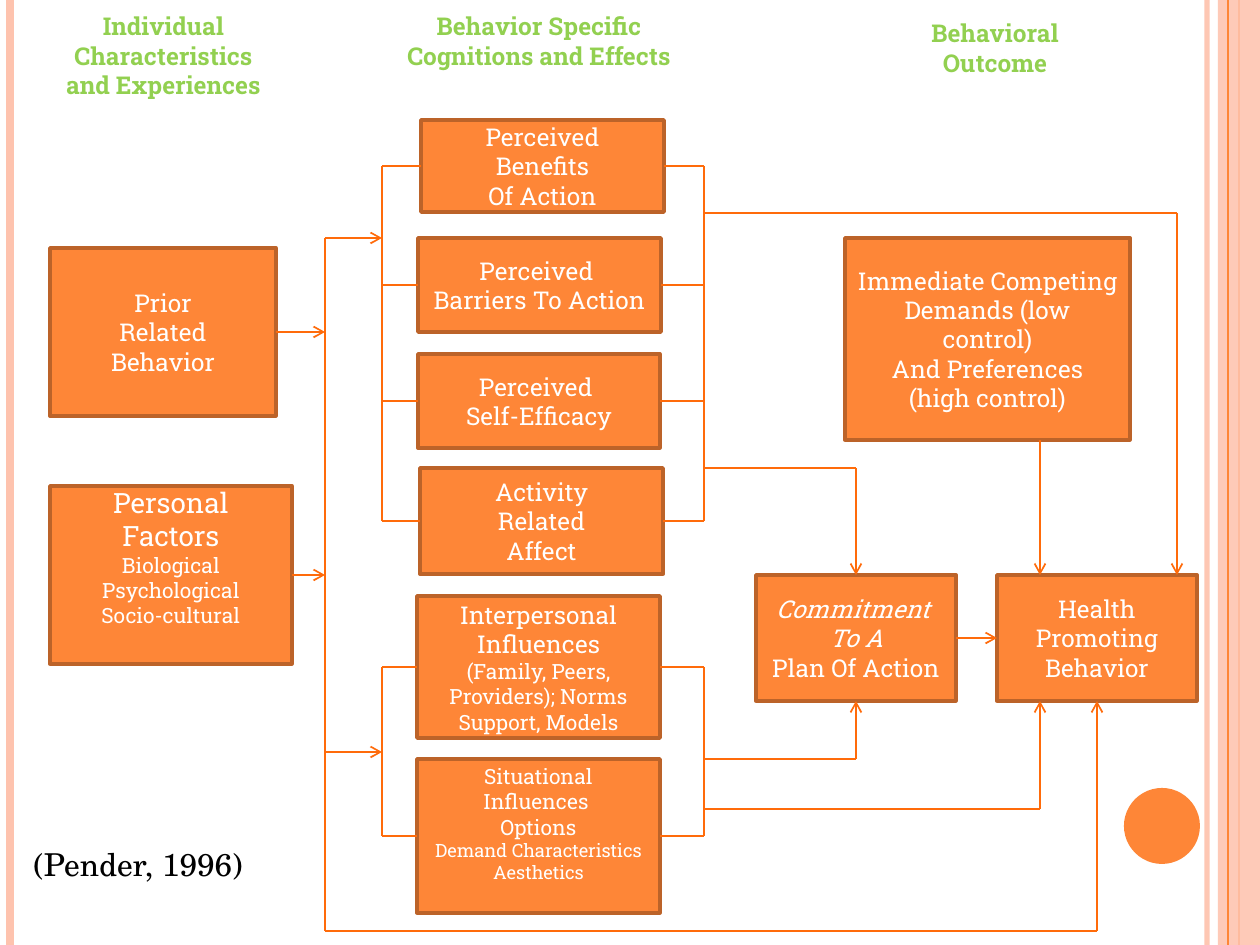
from pptx import Presentation, util as u
from pptx.dml import color
from pptx.enum import shapes, text
from pptx.oxml import ns
from lxml import etree

PX = 914400 / 126
COLORS = {"box": "FE8637", "edge": "BC6329", "flow": "FF6B0A", "pale": "FEC3AE",
          "heading": "92D050", "white": "FFFFFF", "black": "000000"}


def px(n):
    return u.Emu(round(n * PX))


def rgb(name):
    return color.RGBColor.from_string(COLORS[name])


def middle(sp):
    return round((sp.top + sp.height / 2) / PX)


class Board:
    font = "Roboto Slab"

    def __init__(self, prs):
        self.s = prs.slides.add_slide(prs.slide_layouts[6])

    def fill_text(self, tf, lines, ink, sizes, align=text.PP_ALIGN.CENTER,
                  font=None, bold=False, italic=0):
        tf.word_wrap = True
        tf.text = lines
        for i, p in enumerate(tf.paragraphs):
            p.alignment = align
            for r in p.runs:
                r.font.name = font or self.font
                r.font.size = u.Pt(sizes[min(i, len(sizes) - 1)])
                r.font.color.rgb = rgb(ink)
                r.font.bold = bold
                r.font.italic = i < italic

    def alpha(self, fill, percent):
        clr = fill.find(".//" + ns.qn("a:srgbClr"))
        etree.SubElement(clr, ns.qn("a:alpha"), val=str(percent * 1000))

    def shape(self, kind, x, y, w, h, fill, opacity=None):
        sp = self.s.shapes.add_shape(kind, px(x), px(y), px(w), px(h))
        sp.shadow.inherit = False
        sp.fill.solid()
        sp.fill.fore_color.rgb = rgb(fill)
        sp.line.fill.background()
        if opacity:
            self.alpha(sp._element.spPr.find(ns.qn("a:solidFill")), opacity)
        return sp

    def box(self, x, y, w, h, lines, sizes=(14,), italic=0, bottom=6):
        sp = self.shape(shapes.MSO_SHAPE.RECTANGLE, x, y, w, h, "box")
        sp.line.color.rgb = rgb("edge")
        sp.line.width = u.Pt(2)
        tf = sp.text_frame
        tf.vertical_anchor = text.MSO_ANCHOR.MIDDLE
        tf.margin_bottom = px(bottom)
        self.fill_text(tf, lines, "white", sizes, italic=italic)
        return sp

    def label(self, x, y, w, h, lines, ink="heading", size=14, **style):
        tf = self.s.shapes.add_textbox(px(x), px(y), px(w), px(h)).text_frame
        self.fill_text(tf, lines, ink, (size,), **style)

    def line(self, start, end, arrow=False, ink="flow", width=1, opacity=None):
        ends = [p if isinstance(p[0], int) else (0, 0) for p in (start, end)]
        c = self.s.shapes.add_connector(shapes.MSO_CONNECTOR.STRAIGHT,
                                        *(px(n) for p in ends for n in p))
        c.line.color.rgb = rgb(ink)
        c.line.width = u.Pt(width)
        for p, connect in ((start, c.begin_connect), (end, c.end_connect)):
            if not isinstance(p[0], int):
                connect(*p)
        ln = c._element.spPr.get_or_add_ln()
        if opacity:
            self.alpha(ln, opacity)
        if arrow:
            etree.SubElement(ln, ns.qn("a:tailEnd"), type="arrow")
        etree.SubElement(c._element.spPr, ns.qn("a:effectLst"))

    def route(self, *points):
        for i in range(len(points) - 1):
            self.line(points[i], points[i + 1], arrow=i == len(points) - 2)

    def stripe(self, x, ink, width, opacity=None):
        self.line((x, 0), (x, 945), ink=ink, width=width, opacity=opacity)


def main():
    prs = Presentation()
    prs.slide_width, prs.slide_height = px(1260), px(945)
    b = Board(prs)

    b.stripe(1207, "pale", 3, 93)
    b.stripe(10, "pale", 4.5)
    b.stripe(1239, "box", 1.5)
    b.shape(shapes.MSO_SHAPE.RECTANGLE, 1218, 0, 42, 945, "pale", 87)
    b.stripe(1228, "box", 0.75)
    b.shape(shapes.MSO_SHAPE.OVAL, 1124, 788, 76, 76, "box")

    b.label(50, 5, 227, 161, "Individual\nCharacteristics and Experiences", bold=True)
    b.label(392, 5, 294, 123, "Behavior Specific Cognitions and Effects", bold=True)
    b.label(911, 12, 168, 72, "Behavioral Outcome", bold=True)

    prior = b.box(50, 248, 226, 168, "Prior\nRelated\nBehavior")
    personal = b.box(50, 486, 242, 178,
                     "Personal\nFactors\nBiological\nPsychological\nSocio-cultural",
                     (16, 16, 12), bottom=43)
    perceptions = [
        b.box(421, 120, 243, 92, "Perceived\nBenefits\nOf Action"),
        b.box(418, 238, 243, 94, "Perceived \nBarriers To Action"),
        b.box(418, 354, 242, 94, "Perceived \nSelf-Efficacy"),
        b.box(420, 468, 243, 106, "Activity\nRelated\nAffect"),
    ]
    influences = [
        b.box(417, 596, 243, 142,
              "Interpersonal Influences\n(Family, Peers, Providers); Norms\nSupport, Models", (14, 12)),
        b.box(417, 759, 243, 154,
              "Situational\nInfluences \nOptions\nDemand Characteristics Aesthetics",
              (12, 12, 12, 10.5), bottom=31),
    ]
    b.box(845, 238, 285, 202,
          "Immediate Competing Demands (low control)\nAnd Preferences\n(high control)")
    commitment = b.box(756, 575, 200, 126, "Commitment \nTo A\nPlan Of Action", italic=2)
    health = b.box(997, 575, 200, 126, "Health Promoting\nBehavior")

    trunk, left, right = 325, 382, 704
    b.line((trunk, 238), (trunk, 931))
    for source in (prior, personal):
        b.line((source, 3), (trunk, middle(source)), arrow=True)
    for group, entry in ((perceptions, 238), (influences, 752)):
        for x, site in ((left, 1), (right, 3)):
            b.line((x, middle(group[0])), (x, middle(group[-1])))
            for sp in group:
                b.line((sp, site), (x, middle(sp)))
        b.line((trunk, entry), (left, entry), arrow=True)

    b.route((right, 468), (856, 468), (commitment, 0))
    b.route((right, 759), (856, 759), (commitment, 2))
    b.route((right, 213), (1177, 213), (1177, 575))
    b.route((right, 809), (1040, 809), (1040, 701))
    b.route((trunk, 931), (1097, 931), (health, 2))
    b.route((1040, 440), (1040, 575))
    b.route((commitment, 3), (health, 1))

    b.label(21, 839, 289, 50, "(Pender, 1996)", "black", 18,
            align=text.PP_ALIGN.LEFT, font="TeX Gyre Schola")
    prs.save("out.pptx")


if __name__ == "__main__":
    main()
